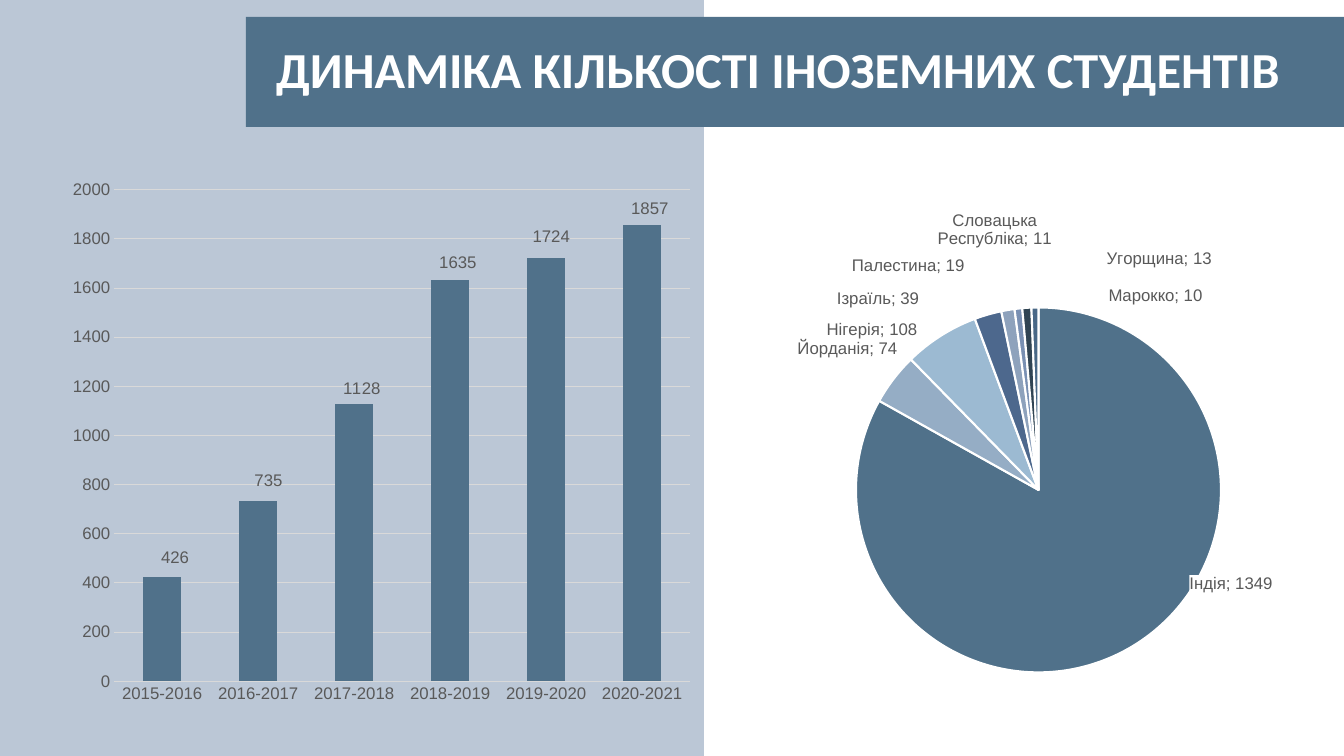
from lxml.etree import SubElement
from pptx import Presentation
from pptx.chart.data import CategoryChartData
from pptx.dml.color import RGBColor
from pptx.enum.chart import XL_CHART_TYPE, XL_LABEL_POSITION, XL_TICK_MARK
from pptx.enum.shapes import MSO_SHAPE
from pptx.enum.text import MSO_ANCHOR, MSO_AUTO_SIZE, PP_ALIGN
from pptx.oxml import parse_xml
from pptx.oxml.ns import nsdecls, qn
from pptx.util import Emu, Pt

PX = 914400 / 100.8
STEEL = RGBColor(0x50, 0x71, 0x8A)
MIST = RGBColor(0x8E, 0xA2, 0xBC)
WHITE = RGBColor(0xFF, 0xFF, 0xFF)
GREY = RGBColor(0x59, 0x59, 0x59)
GRID = RGBColor(0xD9, 0xD9, 0xD9)
SLICES = [
    STEEL,
    RGBColor(0x95, 0xAD, 0xC5),
    RGBColor(0x9C, 0xBA, 0xD2),
    RGBColor(0x4D, 0x68, 0x8D),
    MIST,
    RGBColor(0x79, 0x90, 0xB3),
    RGBColor(0x30, 0x44, 0x53),
    RGBColor(0x49, 0x68, 0x86),
]

YEARS = [
    ("2015-2016", 426, (13, -6)),
    ("2016-2017", 735, (10, -7)),
    ("2017-2018", 1128, (8, -2)),
    ("2018-2019", 1635, (8, -4)),
    ("2019-2020", 1724, (5, -8)),
    ("2020-2021", 1857, (8, -4)),
]
COUNTRIES = [
    ("Індія", 1349, (56, -77)),
    ("Йорданія", 74, (9, -18)),
    ("Нігерія", 108, (-20, 8)),
    ("Ізраїль", 39, (-67, -1)),
    ("Палестина", 19, (-42, -29)),
    ("Словацька Республіка", 11, (34, -55)),
    ("Угорщина", 13, (133, -34)),
    ("Марокко", 10, (121, 3)),
]
LEADERS_OFF = (
    f'<c:extLst {nsdecls("c")}><c:ext uri="{{CE6537A1-D6FC-4f65-9D91-7224C49458BB}}" '
    'xmlns:c15="http://schemas.microsoft.com/office/drawing/2012/chart">'
    '<c15:showLeaderLines val="0"/></c:ext></c:extLst>'
)


def emu(*lengths):
    return [Emu(round(length * PX)) for length in lengths]


def manual_layout(**settings):
    parts = "".join(f'<c:{name} val="{value}"/>' for name, value in settings.items())
    return parse_xml(
        f'<c:layout {nsdecls("c")}><c:manualLayout>{parts}</c:manualLayout></c:layout>'
    )


def remove_children(node, tag):
    for child in node.findall(qn(tag)):
        node.remove(child)


class SlideBuilder:
    def __init__(self, deck):
        self.page = deck.slides.add_slide(deck.slide_layouts[5])
        self.chart_font = "Arial"
        self.title_font = "Calibri"

    def style(self, font, size=12):
        font.name, font.size = self.chart_font, Pt(size)
        font.color.rgb = GREY

    def rectangle(self, place, color, opacity=100):
        shape = self.page.shapes.add_shape(MSO_SHAPE.RECTANGLE, *emu(*place))
        shape.shadow.inherit = False
        shape.fill.solid()
        shape.fill.fore_color.rgb = color
        shape.line.fill.background()
        if opacity < 100:
            tint = next(shape.element.iter(qn("a:srgbClr")))
            SubElement(tint, qn("a:alpha"), val=str(opacity * 1000))

    def title(self, place, text):
        box = self.page.shapes.title
        box.left, box.top, box.width, box.height = emu(*place)
        box.element.getparent().append(box.element)
        frame = box.text_frame
        frame.text = text
        frame.word_wrap = True
        frame.auto_size = MSO_AUTO_SIZE.SHAPE_TO_FIT_TEXT
        frame.vertical_anchor = MSO_ANCHOR.TOP
        para = frame.paragraphs[0]
        para.alignment = PP_ALIGN.LEFT
        font = para.runs[0].font
        font.name, font.size, font.bold = self.title_font, Pt(36), True
        font.color.rgb = WHITE

    def chart(self, kind, place, rows, position, with_category=False):
        data = CategoryChartData()
        data.categories = [name for name, _, _ in rows]
        data.add_series("Series 1", [value for _, value, _ in rows])
        chart = self.page.shapes.add_chart(kind, *emu(*place), data).chart
        chart.has_legend = chart.has_title = False
        self.style(chart.font, 10)
        series = chart.plots[0].series[0]
        labels = series.data_labels
        labels.show_value = True
        labels.show_category_name = with_category
        labels.position = position
        self.style(labels.font)
        for index in range(len(rows)):
            label = series.points[index].data_label
            self.style(label.font)
            label.position = position
        _, _, width, height = place
        for node, (_, _, (right, down)) in zip(chart.element.iter(qn("c:dLbl")), rows):
            remove_children(node, "c:layout")
            offset = manual_layout(x=round(right / width, 3), y=round(down / height, 3))
            node.find(qn("c:idx")).addnext(offset)
            node.find(qn("c:showCatName")).set("val", str(int(with_category)))
        for node in chart.element.iter(qn("c:dLbls")):
            remove_children(node, "c:extLst")
            for leader in node.findall(qn("c:showLeaderLines")):
                leader.set("val", "0")
            node.append(parse_xml(LEADERS_OFF))
        return chart

    def columns(self, place, rows):
        chart = self.chart(
            XL_CHART_TYPE.COLUMN_CLUSTERED, place, rows, XL_LABEL_POSITION.OUTSIDE_END
        )
        plot = chart.plots[0]
        plot.gap_width, plot.vary_by_categories = 150, False
        fill = plot.series[0].format.fill
        fill.solid()
        fill.fore_color.rgb = STEEL
        for axis in (chart.category_axis, chart.value_axis):
            axis.major_tick_mark = axis.minor_tick_mark = XL_TICK_MARK.NONE
            axis.format.line.fill.background()
            self.style(axis.tick_labels.font)
        scale = chart.value_axis
        scale.minimum_scale, scale.maximum_scale, scale.major_unit = 0, 2000, 200
        line = scale.major_gridlines.format.line
        line.color.rgb, line.width = GRID, Pt(0.75)

    def pie(self, place, plot_place, rows, colors):
        chart = self.chart(
            XL_CHART_TYPE.PIE, place, rows, XL_LABEL_POSITION.BEST_FIT, True
        )
        plot = chart.plots[0]
        plot.vary_by_categories = True
        for index, color in enumerate(colors):
            look = plot.series[0].points[index].format
            look.fill.solid()
            look.fill.fore_color.rgb = color
            look.line.color.rgb, look.line.width = WHITE, Pt(1.5)
        for node in chart.element.iter(qn("c:dLbl")):
            remove_children(node, "c:spPr")
            node.find(qn("c:txPr")).addprevious(parse_xml(
                f'<c:spPr {nsdecls("c", "a")}><a:solidFill><a:srgbClr val="{WHITE}"/>'
                '</a:solidFill><a:ln><a:noFill/></a:ln></c:spPr>'
            ))
        area = next(chart.element.iter(qn("c:plotArea")))
        remove_children(area, "c:layout")
        _, _, width, height = place
        left, top, across, down = plot_place
        area.insert(0, manual_layout(
            layoutTarget="inner", xMode="edge", yMode="edge",
            x=left / width, y=top / height, w=across / width, h=down / height,
        ))


def main():
    deck = Presentation()
    deck.slide_width, deck.slide_height = emu(1344, 756)
    builder = SlideBuilder(deck)
    builder.rectangle((0, 0, 704, 756), MIST, 60)
    builder.pie((721, 190, 671, 581), (135, 114, 365, 372), COUNTRIES, SLICES)
    builder.rectangle((246, 17, 1098, 110), STEEL)
    builder.title((266, 33, 1078, 72), "ДИНАМІКА КІЛЬКОСТІ ІНОЗЕМНИХ СТУДЕНТІВ")
    builder.columns((60, 170, 643, 544), YEARS)
    deck.save("out.pptx")


if __name__ == "__main__":
    main()
